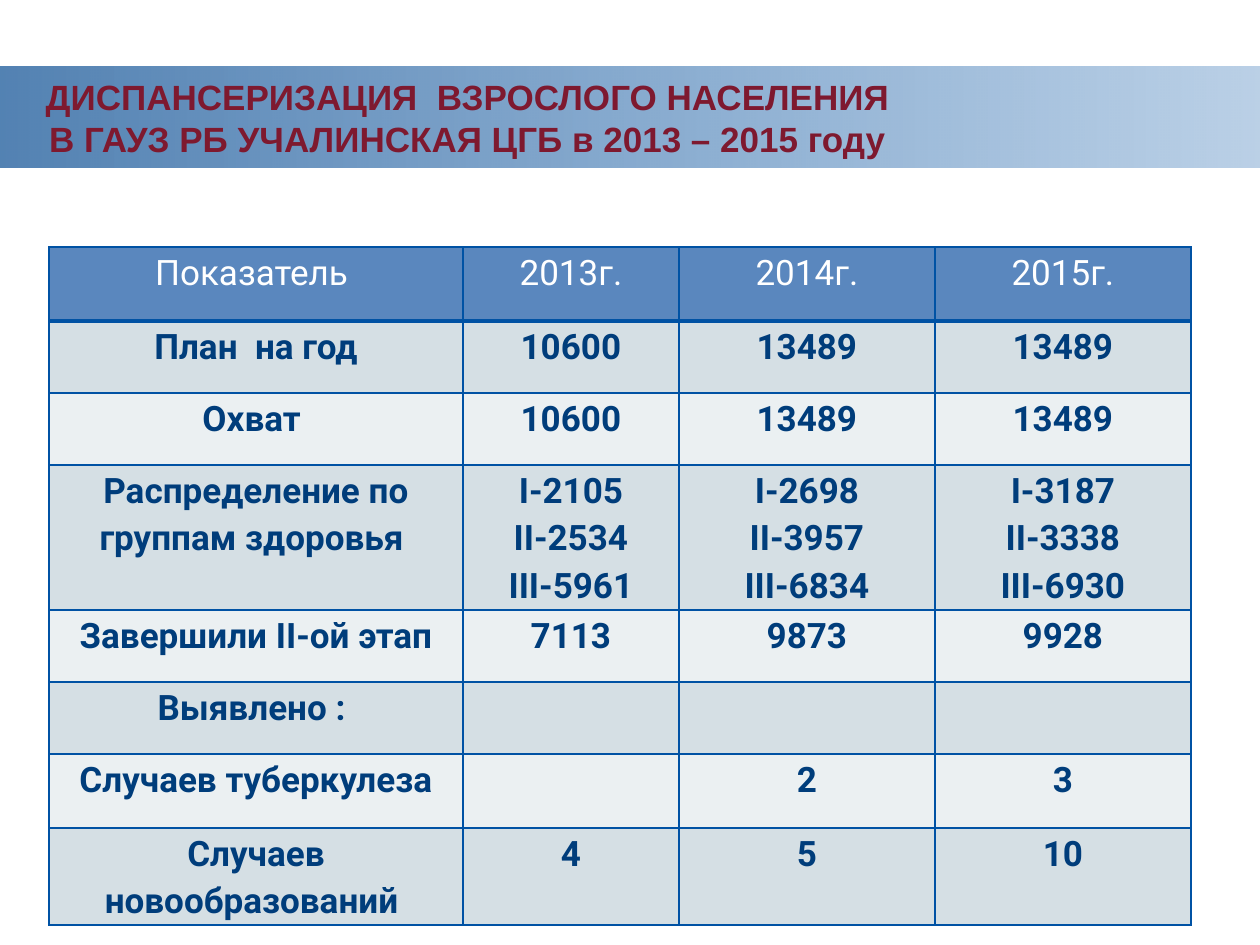
from lxml.etree import SubElement
from pptx import Presentation
from pptx.dml.color import RGBColor
from pptx.enum.shapes import MSO_SHAPE as Shape
from pptx.enum.text import MSO_ANCHOR as Anchor, MSO_AUTO_SIZE as AutoSize, PP_ALIGN as Align
from pptx.oxml.ns import qn
from pptx.util import Emu, Pt

COLORS = {
    "band_start": "00478F", "band_end": "0052A4", "title": "7E192F",
    "header": "5A87BE", "header_text": "FFFFFF", "text": "003D7B",
    "odd": "D5DFE4", "even": "EBF0F2", "border": "0052A4",
}
TITLE = ["ДИСПАНСЕРИЗАЦИЯ  ВЗРОСЛОГО НАСЕЛЕНИЯ",
         "В ГАУЗ РБ УЧАЛИНСКАЯ ЦГБ в 2013 – 2015 году"]
COLUMNS = [414, 216, 256, 256]
# Row height, then the cells; a newline starts a new paragraph.
ROWS = [
    (74, ["Показатель ", "2013г.", "2014г.", "2015г."]),
    (72, ["План  на год", "10600", "13489", "13489"]),
    (72, ["Охват ", "10600", "13489", "13489"]),
    (145, ["Распределение по группам здоровья ", "I-2105\nII-2534\nIII-5961",
           "I-2698\nII-3957\nIII-6834", "I-3187\nII-3338\nIII-6930"]),
    (72, ["Завершили II-ой этап", "7113", "9873", "9928"]),
    (72, ["Выявлено : ", "", "", ""]),
    (74, ["Случаев туберкулеза", "", "2", "3"]),
    (97, ["Случаев новообразований ", "4", "5", "10"]),
]


def px(n):
    return Emu(round(n * 914400 / 126))


def rgb(name):
    return RGBColor.from_string(COLORS[name])


def write(tf, lines, *, font, color, size=20, bold=False, spacing=None):
    """Fill a text frame with centred paragraphs, one per line."""
    for i, line in enumerate(lines):
        p = tf.add_paragraph() if i else tf.paragraphs[0]
        p.alignment = Align.CENTER
        p.space_before = Pt(0)
        p.line_spacing = spacing
        p.font.size = Pt(size)
        if not line:
            continue
        r = p.add_run()
        r.text = line
        r.font.name, r.font.size, r.font.bold = font, Pt(size), bold
        r.font.color.rgb = rgb(color)


def set_borders(cell, **widths):
    """Draw cell edges; keywords are lnL, lnR, lnT and lnB, in points."""
    tc_pr = cell._tc.get_or_add_tcPr()
    for i, (tag, width) in enumerate(widths.items()):
        ln = SubElement(tc_pr, qn(f"a:{tag}"), w=str(Pt(width)))
        fill = SubElement(ln, qn("a:solidFill"))
        SubElement(fill, qn("a:srgbClr"), val=COLORS["border"])
        tc_pr.insert(i, ln)


class SlideBuilder:
    def __init__(self, prs):
        self.slide = prs.slides.add_slide(prs.slide_layouts[5])
        self.shapes = self.slide.shapes

    def band(self, x, y, w, h, stops):
        """Add a left-to-right gradient bar behind everything else."""
        sp = self.shapes.add_shape(Shape.RECTANGLE, px(x), px(y), px(w), px(h))
        sp.shadow.inherit = False
        sp.line.fill.background()
        sp.fill.gradient()
        sp.fill.gradient_angle = 0
        for stop, (color, _) in zip(sp.fill.gradient_stops, stops):
            stop.color.rgb = rgb(color)
        colors = sp._element.spPr.iter(qn("a:srgbClr"))
        for clr, (_, opacity) in zip(colors, stops):
            SubElement(clr, qn("a:alpha"), val=str(opacity * 1000))
        self.shapes._spTree.insert(2, sp._element)

    def title(self, x, y, w, h, lines):
        sp = self.shapes.title
        sp.left, sp.top, sp.width, sp.height = px(x), px(y), px(w), px(h)
        tf = sp.text_frame
        tf.word_wrap = True
        tf.auto_size = AutoSize.NONE
        tf.vertical_anchor = Anchor.TOP
        write(tf, lines, font="Arial", color="title", bold=True)

    def table(self, x, y, columns, rows):
        height = sum(h for h, _ in rows)
        table = self.shapes.add_table(len(rows), len(columns), px(x), px(y),
                                      px(sum(columns)), px(height)).table
        for col, width in zip(table.columns, columns):
            col.width = px(width)
        for i, (row_height, texts) in enumerate(rows):
            table.rows[i].height = px(row_height)
            for j, text in enumerate(texts):
                self.cell(table.cell(i, j), i, text)

    def cell(self, cell, row, text):
        is_header = row == 0
        cell.margin_left = cell.margin_right = px(9)
        cell.margin_top = cell.margin_bottom = 0
        cell.fill.solid()
        cell.fill.fore_color.rgb = rgb(
            "header" if is_header else "odd" if row % 2 else "even")
        write(cell.text_frame, text.split("\n"), font="Roboto", spacing=1.15,
              color="header_text" if is_header else "text", bold=not is_header)
        set_borders(cell, lnL=1, lnR=1, lnT=3 if row == 1 else 1,
                    lnB=3 if is_header else 1)


def main():
    prs = Presentation()
    prs.slide_width, prs.slide_height = px(1260), px(945)
    s = SlideBuilder(prs)
    s.band(0, 67, 1260, 101, [("band_start", 68), ("band_end", 27)])
    s.title(0, 69, 935, 158, TITLE)
    s.table(49, 247, COLUMNS, ROWS)
    prs.save("out.pptx")


if __name__ == "__main__":
    main()
